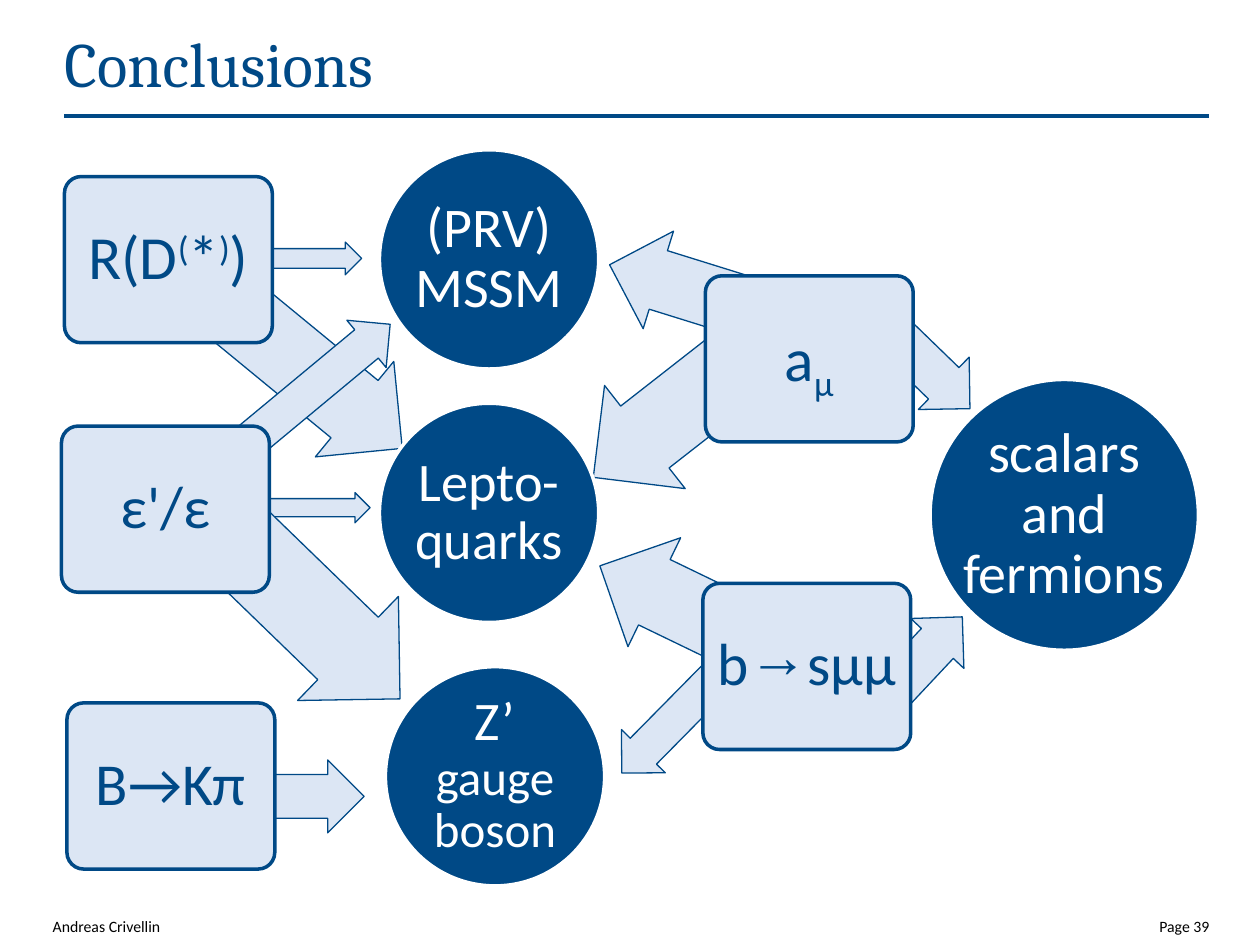
from lxml import etree
from pptx import Presentation
from pptx.dml.color import RGBColor
from pptx.enum.shapes import MSO_CONNECTOR, MSO_SHAPE
from pptx.enum.text import MSO_ANCHOR, MSO_AUTO_SIZE, PP_ALIGN
from pptx.oxml.ns import qn
from pptx.util import Cm, Pt

ARROW = MSO_SHAPE.LEFT_ARROW
OVAL = MSO_SHAPE.OVAL
ROUND = MSO_SHAPE.ROUNDED_RECTANGLE
LINE = MSO_CONNECTOR.STRAIGHT
LEFT, CENTER, RIGHT = PP_ALIGN.LEFT, PP_ALIGN.CENTER, PP_ALIGN.RIGHT
TOP, MIDDLE = MSO_ANCHOR.TOP, MSO_ANCHOR.MIDDLE
FIXED = MSO_AUTO_SIZE.NONE

NAVY, PALE, WHITE, BLACK = "004986", "DCE6F4", "FFFFFF", "000000"


def color(code):
    return RGBColor.from_string(code)


class Deck:
    body, head, symbol = "Calibri", "Cambria", "Arial Narrow"

    def __init__(self):
        self.prs = Presentation()
        self.prs.slide_width, self.prs.slide_height = Cm(25.4), Cm(19.05)
        self.slide = self.prs.slides.add_slide(self.prs.slide_layouts[5])

    def style(self, run, size, ink, font=None, base=0):
        run.font.size = Pt(size)
        run.font.name = font or self.body
        run.font.color.rgb = color(ink)
        if base:
            run._r.get_or_add_rPr().set("baseline", str(base * 1000))

    def label(self, shape, text, size, ink, font=None, align=CENTER,
              anchor=MIDDLE, pad=0, wrap=True):
        frame = shape.text_frame
        frame.auto_size = FIXED
        frame.word_wrap = wrap
        frame.vertical_anchor = anchor
        frame.margin_left = frame.margin_right = Cm(pad)
        frame.margin_top = frame.margin_bottom = Cm(pad)
        para = frame.paragraphs[0]
        para.text = text
        para.alignment = align
        para.line_spacing = 0.9 if align == CENTER else 1.0
        for run in para.runs:
            self.style(run, size, ink, font)

    def extend(self, shape, text, size, ink, font=None, base=0):
        run = shape.text_frame.paragraphs[0].add_run()
        run.text = text
        self.style(run, size, ink, font, base)

    def shape(self, kind, x, y, w, h, fill, line, width):
        item = self.slide.shapes.add_shape(kind, Cm(x), Cm(y), Cm(w), Cm(h))
        item.shadow.inherit = False
        item.fill.solid()
        item.fill.fore_color.rgb = color(fill)
        item.line.color.rgb = color(line)
        item.line.width = Pt(width)
        return item

    def title(self, text):
        item = self.slide.shapes.title
        item.left, item.top, item.width, item.height = (
            Cm(1.3), Cm(0.5), Cm(21.5), Cm(1.42))
        self.label(item, text, 36, NAVY, self.head, LEFT, TOP)

    def rule(self, x, y, end):
        item = self.slide.shapes.add_connector(LINE, Cm(x), Cm(y), Cm(end), Cm(y))
        item.line.color.rgb = color(NAVY)
        item.line.width = Pt(2.5)
        etree.SubElement(item._element.spPr, qn("a:effectLst"))

    def arrow(self, x, y, w, h, turn):
        item = self.shape(ARROW, x, y, w, h, PALE, NAVY, 0.75)
        item.adjustments[0], item.adjustments[1] = 0.6, 0.5
        item.rotation = turn

    def circle(self, x, y, text, size, w=4.42, h=4.42, wrap=True):
        item = self.shape(OVAL, x, y, w, h, NAVY, WHITE, 2)
        self.label(item, text, size, WHITE, pad=0.05, wrap=wrap)
        return item

    def box(self, x, y, text, size=34):
        item = self.shape(ROUND, x, y, 4.19, 3.35, PALE, NAVY, 2)
        item.adjustments[0] = 0.1
        self.label(item, text, size, NAVY, pad=0.18, wrap=False)
        return item

    def note(self, x, y, w, text):
        item = self.slide.shapes.add_textbox(Cm(x), Cm(y), Cm(w), Cm(0.56))
        self.label(item, text, 9, BLACK, align=RIGHT, anchor=TOP)


def main():
    deck = Deck()

    # Title and rule
    deck.title("Conclusions")
    deck.rule(1.3, 2.34, 24.38)

    # Arrows from observables to models: left, top, width, height, turn
    for spot in (
        (4.6, 15.32, 2.74, 1.47, 180),
        (17.09, 12.7, 2.74, 1.47, 133.2),
        (17.2, 6.55, 2.74, 1.47, 224.1),
        (1.85, 9.93, 5.61, 0.61, 180),
        (3.58, 6.17, 5.11, 2.49, 219.4),
        (3.84, 7.37, 4.55, 1.24, 140.3),
        (11.96, 13.59, 3.86, 1.24, 314.6),
        (11.56, 7.14, 3.78, 2.64, 322),
        (11.86, 11.2, 4.65, 2.44, 25.8),
        (2.54, 10.39, 6.43, 2.92, 224.1),
        (3.25, 4.88, 4.04, 0.66, 180),
        (12.19, 4.95, 4.32, 2.06, 17.3),
    ):
        deck.arrow(*spot)

    # Models
    deck.circle(7.65, 3.02, "(PRV)\vMSSM", 32)
    deck.circle(7.65, 8.13, "Lepto-quarks", 31)
    boson = deck.circle(7.77, 13.44, "Z’ ", 31)
    deck.extend(boson, "gauge boson", 28, WHITE)
    deck.circle(18.75, 7.65, "scalars\vand\vfermions", 32, 5.41, 5.46, False)

    # Observables
    ratio = deck.box(1.3, 3.56, "R(D", 35)
    for text, base in (("(", 30), ("*", 0), (")", 30), (")", 0)):
        deck.extend(ratio, text, 35, NAVY, base=base)
    deck.box(1.24, 8.59, "ε'/ε")
    deck.box(1.35, 14.17, "B→Kπ")
    muon = deck.box(14.22, 5.56, "a", 35)
    deck.extend(muon, "μ", 35, NAVY, base=-25)
    decay = deck.box(14.17, 11.76, "b")
    deck.extend(decay, "→", 34, NAVY, deck.symbol)
    deck.extend(decay, "sμμ", 34, NAVY)

    # Footer
    deck.note(0.5, 18.49, 2.73, "Andreas Crivellin")
    deck.note(22.78, 18.49, 1.6, "Page 39")

    deck.prs.save("out.pptx")


if __name__ == "__main__":
    main()
